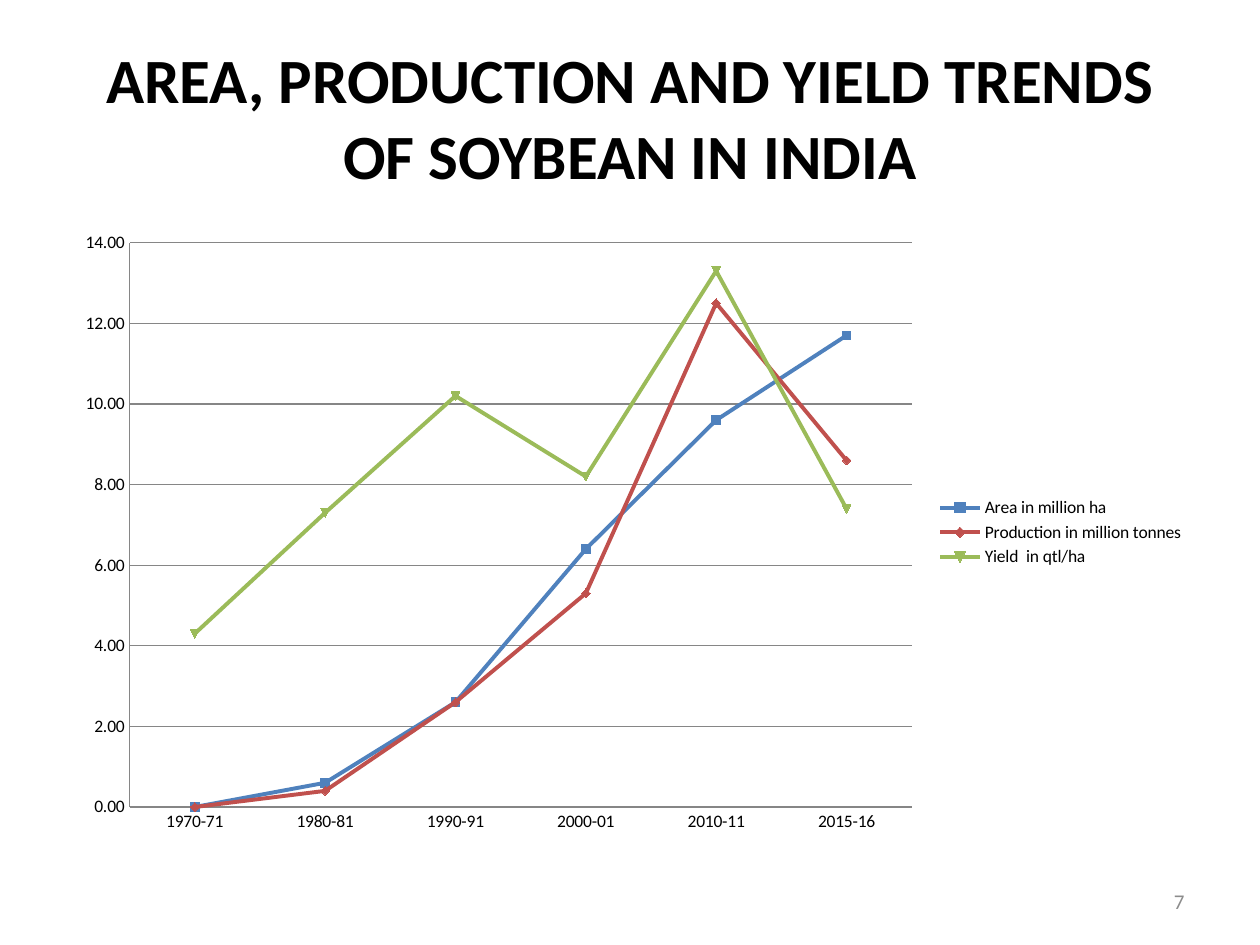
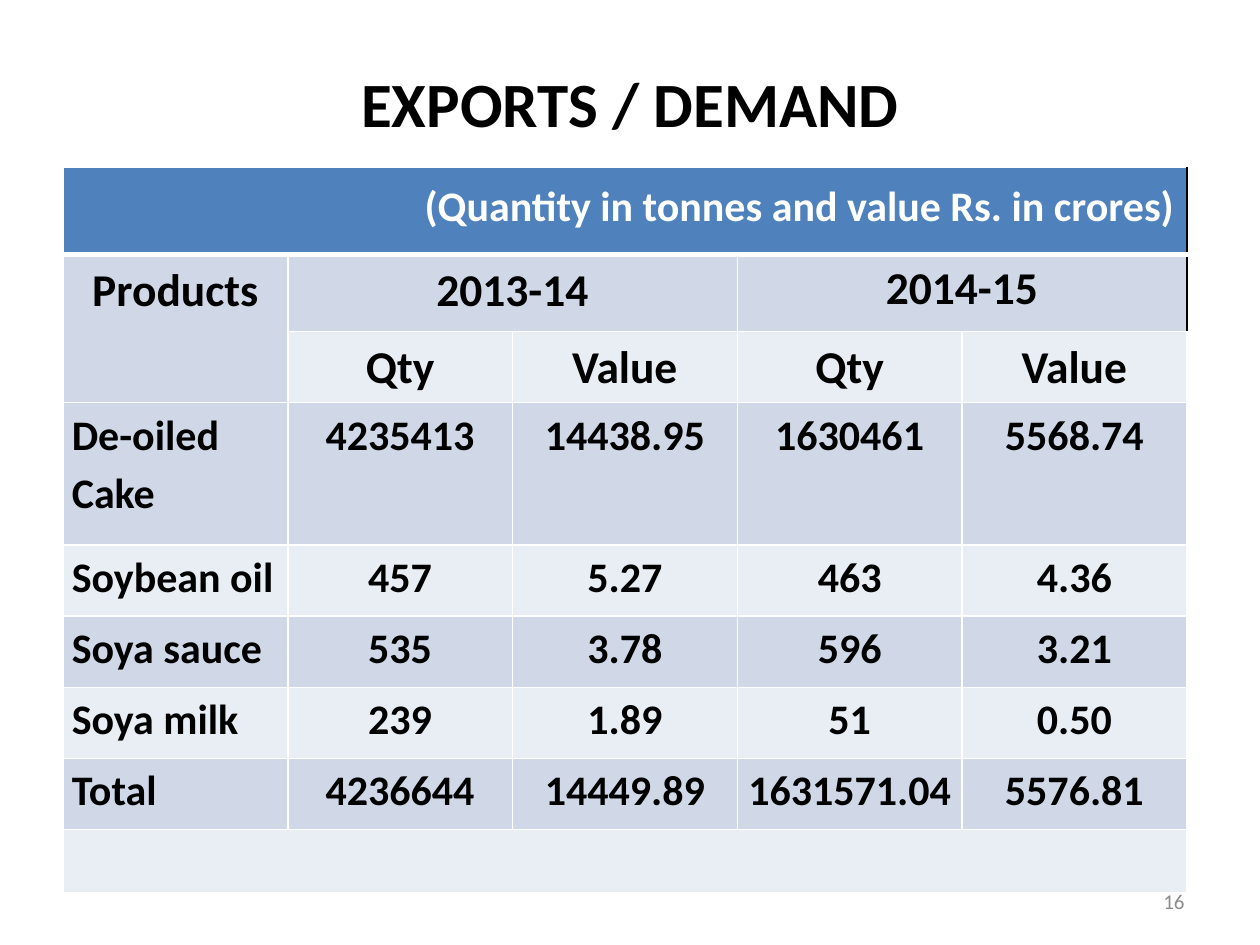
"""Build two slides on soybean in India: trend chart and export table."""
from dataclasses import dataclass

from lxml import etree
from pptx import Presentation
from pptx.chart.data import CategoryChartData
from pptx.dml.color import RGBColor
from pptx.enum.chart import XL_CHART_TYPE, XL_LEGEND_POSITION, XL_TICK_MARK
from pptx.enum.text import MSO_ANCHOR, MSO_AUTO_SIZE, PP_ALIGN
from pptx.oxml.ns import qn
from pptx.util import Inches, Pt

LINE_MARKERS = XL_CHART_TYPE.LINE_MARKERS
LEGEND_RIGHT = XL_LEGEND_POSITION.RIGHT
NO_TICK = XL_TICK_MARK.NONE
MIDDLE = MSO_ANCHOR.MIDDLE
NO_AUTOFIT = MSO_AUTO_SIZE.NONE
LEFT, CENTER, RIGHT = PP_ALIGN.LEFT, PP_ALIGN.CENTER, PP_ALIGN.RIGHT

BLACK = RGBColor(0x00, 0x00, 0x00)
WHITE = RGBColor(0xFF, 0xFF, 0xFF)
GREY = RGBColor(0x8C, 0x8C, 0x8C)
GRID_GREY = RGBColor(0x86, 0x86, 0x86)
BLUE = RGBColor(0x4F, 0x81, 0xBD)
RED = RGBColor(0xC0, 0x50, 0x4D)
GREEN = RGBColor(0x9B, 0xBB, 0x59)
DARK_BAND = RGBColor(0xD0, 0xD8, 0xE8)
LIGHT_BAND = RGBColor(0xE9, 0xED, 0xF4)

FONT = "Calibri"
SLIDE_WIDTH, SLIDE_HEIGHT = Inches(10), Inches(7.5)
MARGIN = round(SLIDE_WIDTH * 0.05)
CONTENT_WIDTH = SLIDE_WIDTH - 2 * MARGIN
TITLE_TOP = round(SLIDE_HEIGHT * 0.04)
TITLE_ONLY = 5


@dataclass(frozen=True)
class Trend:
    """One measured quantity over the years."""

    name: str
    values: tuple[float, ...]
    color: RGBColor


@dataclass(frozen=True)
class Span:
    """A block of merged table cells."""

    row: int
    column: int
    last_row: int
    last_column: int


YEARS = ("1970-71", "1980-81", "1990-91", "2000-01", "2010-11", "2015-16")
TRENDS = (
    Trend("Area in million ha", (0, 0.6, 2.6, 6.4, 9.6, 11.7), BLUE),
    Trend("Production in million tonnes", (0, 0.4, 2.6, 5.3, 12.5, 8.6), RED),
    Trend("Yield  in qtl/ha", (4.3, 7.3, 10.2, 8.2, 13.3, 7.4), GREEN),
)

EXPORTS = (
    ("(Quantity in tonnes and value Rs. in crores)", "", "", "", ""),
    ("Products", "2013-14", "", "2014-15", ""),
    ("", "Qty", "Value", "Qty", "Value"),
    ("De-oiled Cake", "4235413", "14438.95", "1630461", "5568.74"),
    ("Soybean oil", "457", "5.27", "463", "4.36"),
    ("Soya sauce", "535", "3.78", "596", "3.21"),
    ("Soya milk", "239", "1.89", "51", "0.50"),
    ("Total", "4236644", "14449.89", "1631571.04", "5576.81"),
    ("", "", "", "", ""),
)
SPANS = (
    Span(0, 0, 0, 4),
    Span(1, 0, 2, 0),
    Span(1, 1, 1, 2),
    Span(1, 3, 1, 4),
    Span(8, 0, 8, 4),
)
UNIT_ROW, YEAR_ROW, MEASURE_ROW = 0, 1, 2
LATEST_YEAR_COLUMN = 3
ROW_HEIGHT = 0.565
ROW_HEIGHTS = (0.69, 0.61, ROW_HEIGHT, 2 * ROW_HEIGHT) + 4 * (ROW_HEIGHT,) + (0.5,)


def write_text(frame, text: str, *, size: float, color: RGBColor = BLACK,
               bold: bool = True, align: PP_ALIGN = CENTER,
               spacing: float = 1.0) -> None:
    """Put one formatted paragraph into a text frame."""
    paragraph = frame.paragraphs[0]
    paragraph.alignment = align
    paragraph.line_spacing = spacing
    run = paragraph.add_run()
    run.text = text
    run.font.name = FONT
    run.font.size = Pt(size)
    run.font.bold = bold
    run.font.color.rgb = color


def add_titled_slide(deck, heading: str, title_height: float, number: int):
    """Add a slide with its heading and page number."""
    slide = deck.slides.add_slide(deck.slide_layouts[TITLE_ONLY])
    title = slide.shapes.title
    title.left, title.top = MARGIN, TITLE_TOP
    title.width, title.height = CONTENT_WIDTH, Inches(title_height)
    title.text_frame.auto_size = NO_AUTOFIT
    title.text_frame.vertical_anchor = MIDDLE
    write_text(title.text_frame, heading, size=36)

    number_width = Inches(2.33)
    page_number = slide.shapes.add_textbox(
        SLIDE_WIDTH - MARGIN - number_width, Inches(6.95), number_width, Inches(0.4))
    page_number.text_frame.word_wrap = True
    page_number.text_frame.vertical_anchor = MIDDLE
    write_text(page_number.text_frame, str(number), size=12, color=GREY,
               bold=False, align=RIGHT)
    return slide


def draw_trends(slide) -> None:
    """Draw the line chart of area, production and yield."""
    data = CategoryChartData(number_format="0.00")
    data.categories = YEARS
    for trend in TRENDS:
        data.add_series(trend.name, trend.values)
    chart = slide.shapes.add_chart(
        LINE_MARKERS, MARGIN, Inches(1.75), CONTENT_WIDTH, Inches(4.95), data).chart
    chart.has_title = False
    chart.font.name = FONT
    chart.font.size = Pt(10)
    chart.font.color.rgb = BLACK
    chart.has_legend = True
    chart.legend.position = LEGEND_RIGHT
    chart.legend.include_in_layout = False

    for axis in (chart.category_axis, chart.value_axis):
        axis.major_tick_mark = axis.minor_tick_mark = NO_TICK
        axis.format.line.color.rgb = GRID_GREY
    scale = chart.value_axis
    scale.minimum_scale, scale.maximum_scale, scale.major_unit = 0, 14, 2
    scale.tick_labels.number_format = "0.00"
    scale.tick_labels.number_format_is_linked = False
    scale.major_gridlines.format.line.color.rgb = GRID_GREY

    plot = chart.plots[0]
    plot.vary_by_categories = False
    for trend, series in zip(TRENDS, plot.series):
        series.smooth = False
        series.format.line.width = Pt(2.25)
        series.format.line.color.rgb = trend.color
        series.marker.format.fill.solid()
        series.marker.format.fill.fore_color.rgb = trend.color
        series.marker.format.line.color.rgb = trend.color


def set_border(cell, side: str, color: RGBColor, width: float) -> None:
    """Draw one side of a cell."""
    edge = etree.SubElement(cell._tc.get_or_add_tcPr(), qn(f"a:ln{side}"),
                            w=str(Pt(width)))
    fill = etree.SubElement(edge, qn("a:solidFill"))
    etree.SubElement(fill, qn("a:srgbClr"), val=str(color))


def style_cell(cell, row: int, column: int) -> None:
    """Give a cell its borders and band colour."""
    dark_edge = row == UNIT_ROW or (row == YEAR_ROW and column >= LATEST_YEAR_COLUMN)
    set_border(cell, "L", WHITE, 1)
    set_border(cell, "R", BLACK if dark_edge else WHITE, 1)
    set_border(cell, "T", WHITE, 3 if row == YEAR_ROW else 1)
    set_border(cell, "B", WHITE, 3 if row == UNIT_ROW else 1)
    cell.fill.solid()
    band = DARK_BAND if row % 2 else LIGHT_BAND
    cell.fill.fore_color.rgb = BLUE if row == UNIT_ROW else band


def fill_cell(cell, text: str, row: int, column: int) -> None:
    """Write a cell's text in the format of its row and column."""
    latest_year = row == YEAR_ROW and column == LATEST_YEAR_COLUMN
    if row != UNIT_ROW and not latest_year:
        cell.margin_left = cell.margin_right = Inches(0.07)
        cell.margin_top = cell.margin_bottom = 0
    if row == UNIT_ROW:
        align = RIGHT
    else:
        align = LEFT if row > MEASURE_ROW and column == 0 else CENTER
    write_text(cell.text_frame, text, align=align,
               size=26 if row in (YEAR_ROW, MEASURE_ROW) else 24,
               color=WHITE if row == UNIT_ROW else BLACK,
               spacing=1.0 if latest_year else 1.15)


def draw_exports(slide) -> None:
    """Draw the table of exported quantities and values."""
    column_count = len(EXPORTS[0])
    table = slide.shapes.add_table(
        len(EXPORTS), column_count, MARGIN, Inches(1.33),
        Inches(8.92), Inches(sum(ROW_HEIGHTS))).table
    table.horz_banding = False
    for table_row, height in zip(table.rows, ROW_HEIGHTS):
        table_row.height = Inches(height)
    for row, entries in enumerate(EXPORTS):
        for column, text in enumerate(entries):
            cell = table.cell(row, column)
            style_cell(cell, row, column)
            if text:
                fill_cell(cell, text, row, column)
    for span in SPANS:
        table.cell(span.row, span.column).merge(
            table.cell(span.last_row, span.last_column))


def main() -> None:
    """Build and save the deck."""
    deck = Presentation()
    deck.slide_width, deck.slide_height = SLIDE_WIDTH, SLIDE_HEIGHT
    draw_trends(add_titled_slide(
        deck, "AREA, PRODUCTION AND YIELD TRENDS OF SOYBEAN IN INDIA", 1.25, 7))
    draw_exports(add_titled_slide(deck, "EXPORTS / DEMAND", 1.03, 16))
    deck.save("out.pptx")


if __name__ == "__main__":
    main()
